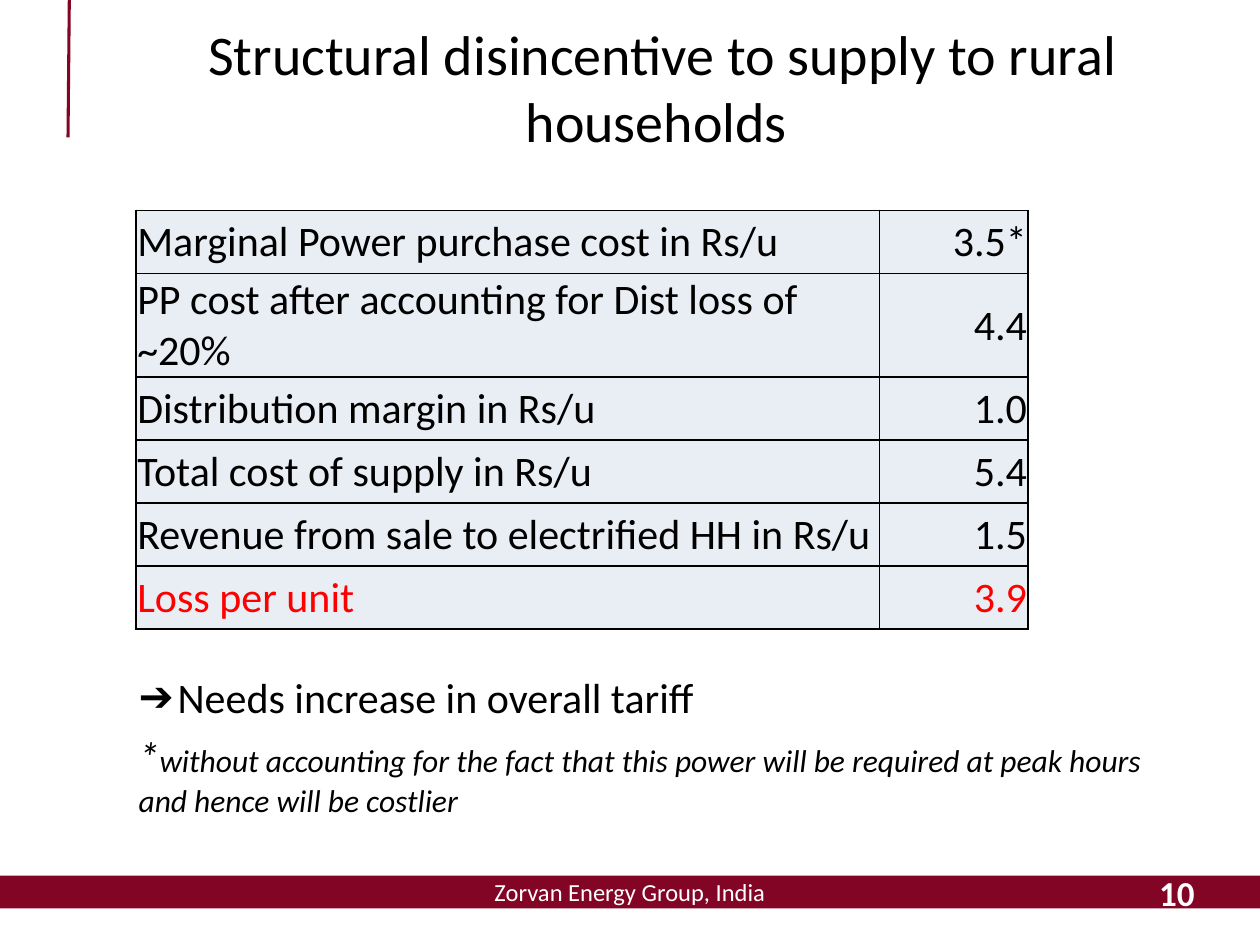
from lxml import etree
from pptx import Presentation
from pptx import util as u
from pptx.dml.color import RGBColor
from pptx.enum import shapes, text
from pptx.oxml.ns import qn

COLORS = {"maroon": "830526", "black": "000000", "white": "FFFFFF",
          "loss": "FF0000", "cell": "E9EDF4"}
COSTS = [
    ("Marginal Power purchase cost in Rs/u", "3.5*"),
    ("PP cost after accounting for Dist loss of ~20%", "4.4"),
    ("Distribution margin in Rs/u", "1.0"),
    ("Total cost of supply in Rs/u", "5.4"),
    ("Revenue from sale to electrified HH in Rs/u", "1.5"),
    ("Loss per unit", "3.9"),
]
LEFT, CENTER, RIGHT = (text.PP_ALIGN.LEFT, text.PP_ALIGN.CENTER,
                       text.PP_ALIGN.RIGHT)


def rgb(name):
    return RGBColor.from_string(COLORS[name])


def set_all(target, values):
    for name, value in values.items():
        setattr(target, name, value)


def place(shape, left, top, width, height):
    set_all(shape, {"left": u.Inches(left), "top": u.Inches(top),
                    "width": u.Inches(width), "height": u.Inches(height)})


def write(paragraph, wording, size, color="black", **font):
    run = paragraph.add_run()
    run.text = wording
    set_all(run.font, {"name": "Calibri", "size": u.Pt(size), **font})
    run.font.color.rgb = rgb(color)


def set_bullet(paragraph, margin, indent, bullet=None):
    """Set the indents in inches and the bullet character, if any."""
    props = paragraph._p.get_or_add_pPr()
    props.set("marL", str(u.Inches(margin)))
    props.set("indent", str(u.Inches(indent)))
    if bullet:
        etree.SubElement(props, qn("a:buChar")).set("char", bullet)
    else:
        etree.SubElement(props, qn("a:buNone"))


def add_footer_bar(slide):
    bar = slide.shapes.add_shape(shapes.MSO_SHAPE.RECTANGLE, u.Inches(0),
                                 u.Inches(6.95), u.Inches(10), u.Inches(0.26))
    bar.shadow.inherit = False
    bar.fill.solid()
    bar.fill.fore_color.rgb = rgb("maroon")
    bar.line.fill.background()
    set_all(bar.text_frame, {"word_wrap": False,
                             "vertical_anchor": text.MSO_ANCHOR.MIDDLE})
    label = bar.text_frame.paragraphs[0]
    label.alignment = CENTER
    write(label, "Zorvan Energy Group, India", 14, "white")


def add_corner_rule(slide):
    rule = slide.shapes.add_connector(
        shapes.MSO_CONNECTOR.STRAIGHT, u.Inches(0.55), u.Inches(0),
        u.Inches(0.54), u.Inches(1.09))
    rule.line.color.rgb = rgb("maroon")
    rule.line.width = u.Pt(1.75)
    etree.SubElement(rule._element.spPr, qn("a:effectLst"))


def fill_title(title):
    place(title, 0.42, 0, 9.58, 1.38)
    set_all(title.text_frame, {"auto_size": text.MSO_AUTO_SIZE.NONE,
                               "vertical_anchor": text.MSO_ANCHOR.MIDDLE})
    heading = title.text_frame.paragraphs[0]
    heading.alignment = CENTER
    write(heading, " Structural disincentive to supply to rural households", 32)


def fill_conclusion(body):
    place(body, 0.5, 5.28, 9.08, 1.6)
    frame = body.text_frame
    frame.auto_size = text.MSO_AUTO_SIZE.NONE
    conclusion, footnote = frame.paragraphs[0], frame.add_paragraph()
    conclusion.space_before = u.Pt(0)
    footnote.space_before = u.Pt(4.8)
    set_bullet(conclusion, 0.81, -0.31, "➔")
    set_bullet(footnote, 0.5, 0)
    write(conclusion, "Needs increase in overall tariff", 24)
    write(footnote, "*", 24, italic=True)
    write(footnote, "without accounting for the fact that this power will be "
          "required at peak hours and hence will be costlier", 18, italic=True)


def add_borders(cell):
    props = cell._tc.get_or_add_tcPr()
    for side in ("lnL", "lnR", "lnT", "lnB"):
        border = etree.SubElement(props, qn(f"a:{side}"))
        border.set("w", str(u.Pt(1)))
        fill = etree.SubElement(border, qn("a:solidFill"))
        etree.SubElement(fill, qn("a:srgbClr")).set("val", COLORS["black"])


def fill_cell(cell, wording, align, color):
    add_borders(cell)
    cell.fill.solid()
    cell.fill.fore_color.rgb = rgb("cell")
    edge = u.Inches(0.01)
    set_all(cell, {"margin_left": edge, "margin_right": edge,
                   "margin_top": edge, "margin_bottom": 0,
                   "vertical_anchor": text.MSO_ANCHOR.MIDDLE})
    entry = cell.text_frame.paragraphs[0]
    entry.alignment = align
    write(entry, wording, 24, color)


def add_cost_table(slide):
    table = slide.shapes.add_table(
        len(COSTS), 2, u.Inches(1.08), u.Inches(1.67),
        u.Inches(7.08), u.Inches(3.09)).table
    set_all(table, {"first_row": False, "horz_banding": False})
    for column, width in zip(table.columns, (5.9, 1.18)):
        column.width = u.Inches(width)
    for index, costs in enumerate(COSTS):
        table.rows[index].height = u.Inches(0.59 if index == 1 else 0.5)
        color = "loss" if index == len(COSTS) - 1 else "black"
        for cell, wording, align in zip(table.rows[index].cells, costs,
                                        (LEFT, RIGHT)):
            fill_cell(cell, wording, align, color)


def add_page_number(slide):
    box = slide.shapes.add_textbox(u.Inches(7.25), u.Inches(6.88),
                                   u.Inches(2.33), u.Inches(0.4))
    set_all(box.text_frame, {"word_wrap": True,
                             "vertical_anchor": text.MSO_ANCHOR.MIDDLE})
    number = box.text_frame.paragraphs[0]
    number.alignment = RIGHT
    write(number, "10", 20, "white", bold=True)


def main():
    deck = Presentation()
    set_all(deck, {"slide_width": u.Inches(10), "slide_height": u.Inches(7.5)})
    slide = deck.slides.add_slide(deck.slide_layouts[1])
    add_footer_bar(slide)
    add_corner_rule(slide)
    fill_title(slide.shapes.title)
    fill_conclusion(slide.placeholders[1])
    add_cost_table(slide)
    add_page_number(slide)
    deck.save("out.pptx")


if __name__ == "__main__":
    main()
